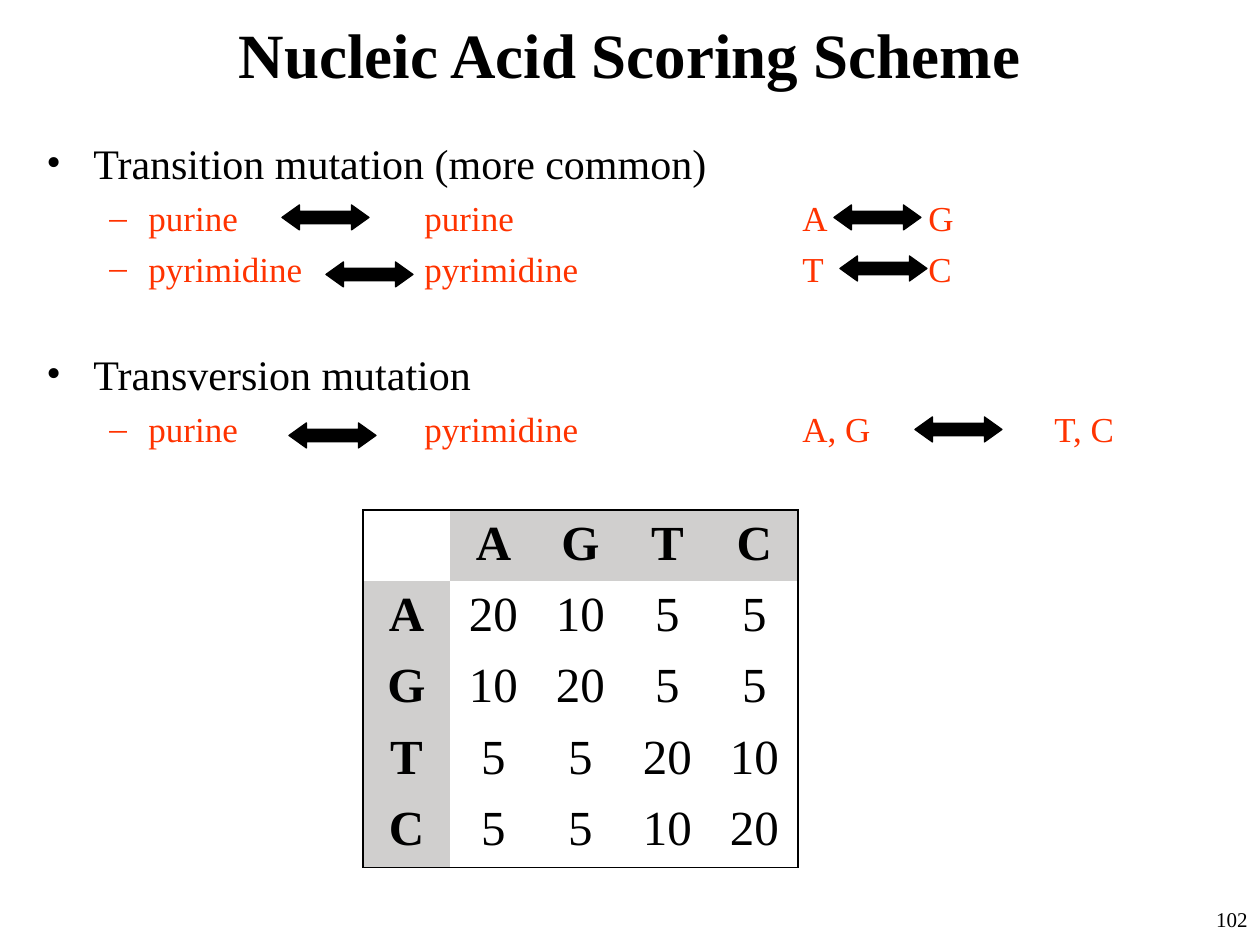
from lxml import etree
from pptx import Presentation
from pptx.dml.color import RGBColor
from pptx.enum.shapes import MSO_SHAPE
from pptx.enum.text import MSO_ANCHOR, PP_ALIGN
from pptx.oxml.ns import qn
from pptx.util import Pt

PX = 914400 // 126
FONT = "Times New Roman"
BLACK, ORANGE, GREY = "000000", "FF3300", "D0CFCE"
LEFT, CENTER, RIGHT = PP_ALIGN.LEFT, PP_ALIGN.CENTER, PP_ALIGN.RIGHT
TOP, MIDDLE = MSO_ANCHOR.TOP, MSO_ANCHOR.MIDDLE
DOUBLE_ARROW = MSO_SHAPE.LEFT_RIGHT_ARROW

TITLE = "Nucleic Acid Scoring Scheme"
PAGE_NUMBER = "102"

# level, text, space before in points
MUTATIONS = [
    (0, "Transition mutation (more common)", 5),
    (1, "purine\t\tpurine\t\t\tA\tG", 5),
    (1, "pyrimidine \tpyrimidine\t\tT\tC", 5),
    (0, "Transversion mutation", 34),
    (1, "purine \t\tpyrimidine\t\tA, G\t\tT, C", 5),
]
# bullet, left margin and hanging indent in px, size in points, colour
LEVELS = [("•", 47, 47, 24, BLACK), ("–", 102, 39, 20, ORANGE)]

ARROW_SIZE = (87, 25)
ARROW_CORNERS = [(282, 205), (834, 205), (326, 262),
                 (840, 256), (289, 423), (915, 417)]

BASES = ["A", "G", "T", "C"]
SCORES = [
    [20, 10, 5, 5],
    [10, 20, 5, 5],
    [5, 5, 20, 10],
    [5, 5, 10, 20],
]
TABLE_LEFT, TABLE_TOP = 363, 510
COLUMN_WIDTH, ROW_HEIGHT = 87, 71


def color(hex_code):
    return RGBColor.from_string(hex_code)


def emu(*lengths):
    return [length * PX for length in lengths]


def style(paragraph, size, hex_code=BLACK, bold=False, align=LEFT):
    paragraph.alignment = align
    for run in paragraph.runs:
        font = run.font
        font.name, font.size, font.bold = FONT, Pt(size), bold
        font.color.rgb = color(hex_code)


def add_text_frame(slide, box, anchor=TOP):
    frame = slide.shapes.add_textbox(*emu(*box)).text_frame
    frame.word_wrap = True
    frame.vertical_anchor = anchor
    return frame


def set_bullet(paragraph, bullet, margin, hanging):
    """Add a hanging bullet and tab stops one inch apart."""
    props = paragraph._p.get_or_add_pPr()
    props.set("marL", str(margin * PX))
    props.set("indent", str(-hanging * PX))
    props.set("defTabSz", "914400")
    etree.SubElement(props, qn("a:buFont"), typeface=FONT)
    etree.SubElement(props, qn("a:buChar"), char=bullet)


def add_mutations(slide):
    frame = add_text_frame(slide, (34, 131, 1191, 462))
    frame.text = "\n".join(text for _, text, _ in MUTATIONS)
    for paragraph, (level, _, gap) in zip(frame.paragraphs, MUTATIONS):
        bullet, margin, hanging, size, hex_code = LEVELS[level]
        paragraph.level = level
        style(paragraph, size, hex_code)
        paragraph.space_before = Pt(gap)
        set_bullet(paragraph, bullet, margin, hanging)


def add_arrow(slide, corner):
    arrow = slide.shapes.add_shape(DOUBLE_ARROW, *emu(*corner, *ARROW_SIZE))
    arrow.adjustments[0], arrow.adjustments[1] = 0.5, 0.7
    arrow.shadow.inherit = False
    arrow.fill.solid()
    arrow.fill.fore_color.rgb = color(BLACK)
    arrow.line.color.rgb = color(BLACK)
    arrow.line.width = Pt(0.75)


def set_borders(cell, drawn):
    """Draw the sides flagged in drawn and hide the others."""
    props = cell._tc.get_or_add_tcPr()
    for side in "LRTB":
        line = etree.SubElement(props, qn(f"a:ln{side}"), w=str(Pt(1)))
        if drawn[side]:
            fill = etree.SubElement(line, qn("a:solidFill"))
            etree.SubElement(fill, qn("a:srgbClr"), val=BLACK)
        else:
            etree.SubElement(line, qn("a:noFill"))


def add_score_table(slide):
    rows = [[""] + BASES]
    rows += [[base] + scores for base, scores in zip(BASES, SCORES)]
    count = len(rows)
    table = slide.shapes.add_table(count, count, *emu(
        TABLE_LEFT, TABLE_TOP, COLUMN_WIDTH * count, ROW_HEIGHT * count)).table
    table.first_row = table.horz_banding = False
    for column in table.columns:
        column.width = COLUMN_WIDTH * PX
    for r, row in enumerate(rows):
        table.rows[r].height = ROW_HEIGHT * PX
        for c, value in enumerate(row):
            cell = table.cell(r, c)
            set_borders(cell, {"L": c == 0, "R": c == count - 1,
                               "T": r == 0, "B": r == count - 1})
            is_header = (r == 0) != (c == 0)
            if is_header:
                cell.fill.solid()
                cell.fill.fore_color.rgb = color(GREY)
            else:
                cell.fill.background()
            cell.text = str(value)
            style(cell.text_frame.paragraphs[0], 28, bold=is_header, align=CENTER)


def main():
    prs = Presentation()
    prs.slide_width, prs.slide_height = emu(1260, 945)
    slide = prs.slides.add_slide(prs.slide_layouts[6])

    title = add_text_frame(slide, (0, 0, 1260, 106), MIDDLE)
    title.text = TITLE
    style(title.paragraphs[0], 36, bold=True, align=CENTER)

    add_mutations(slide)
    for corner in ARROW_CORNERS:
        add_arrow(slide, corner)
    add_score_table(slide)

    page = add_text_frame(slide, (998, 900, 262, 45))
    page.text = PAGE_NUMBER
    style(page.paragraphs[0], 12, align=RIGHT)

    prs.save("out.pptx")


if __name__ == "__main__":
    main()
